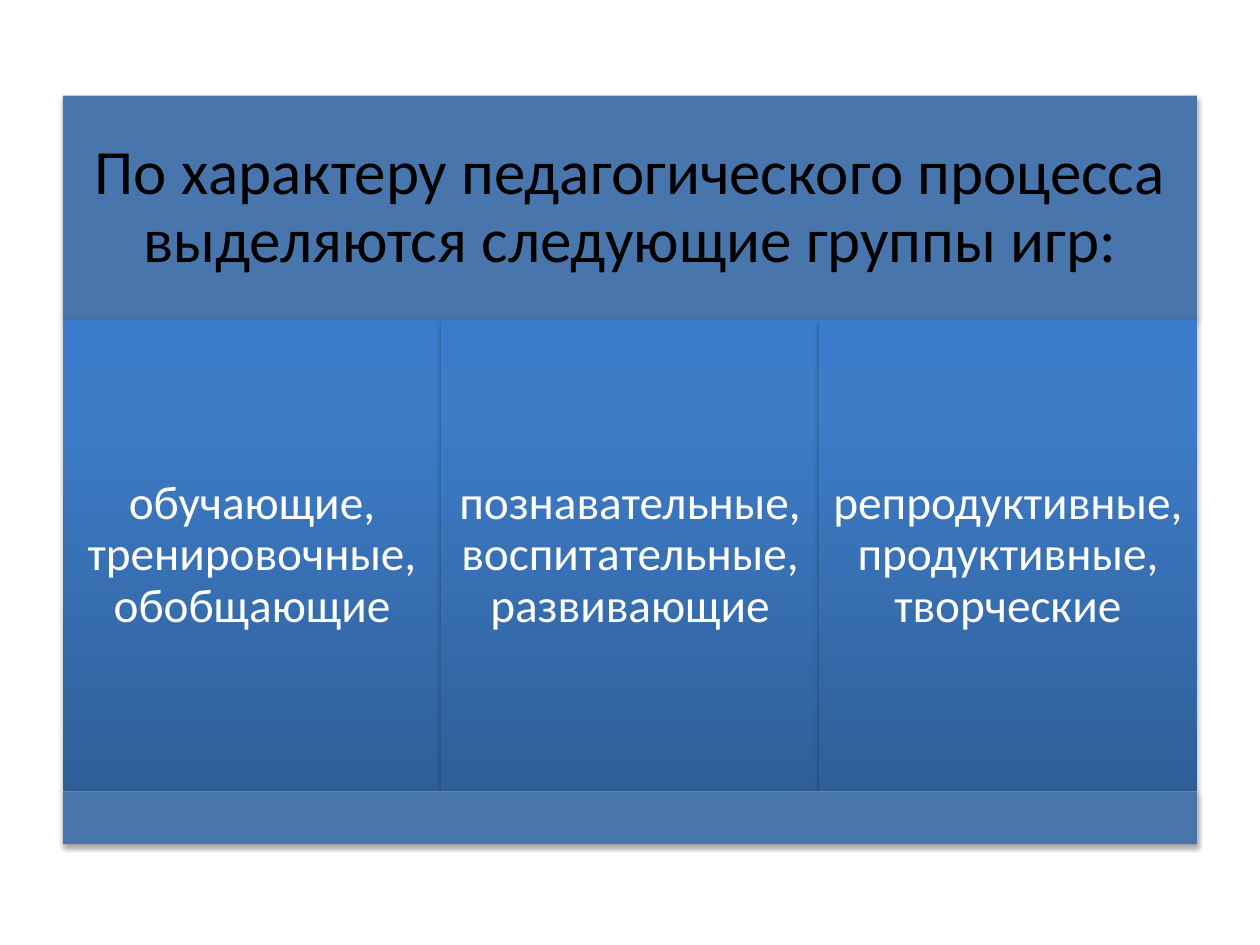
from dataclasses import dataclass
from itertools import accumulate

from lxml import etree
from pptx import Presentation
from pptx.dml.color import RGBColor
from pptx.enum.shapes import MSO_SHAPE
from pptx.enum.text import MSO_ANCHOR, PP_ALIGN
from pptx.oxml import parse_xml
from pptx.oxml.ns import nsdecls, qn
from pptx.util import Inches, Pt

RECT = MSO_SHAPE.RECTANGLE
MIDDLE = MSO_ANCHOR.MIDDLE
CENTER = PP_ALIGN.CENTER


@dataclass(frozen=True)
class Theme:
    font: str = "Calibri"
    band: str = "4875AC"
    stops: tuple = ((0, "2F5F99"), (80, "3D7CC7"), (100, "3A7CCB"))
    dark: str = "000000"
    light: str = "FFFFFF"
    head: int = 36
    body: int = 27


THEME = Theme()
LEFT, TOP, COL = 0.5, 0.76, 3
ROWS = (1.78, 3.74, 0.42)
TOPS = tuple(accumulate(ROWS, initial=TOP))
TITLE = "По характеру педагогического процесса выделяются следующие группы игр:"
GAMES = (
    "обучающие, тренировочные, обобщающие",
    "познавательные, воспитательные, развивающие",
    "репродуктивные, продуктивные, творческие",
)


def add_shade(shape):
    shape.shadow.inherit = False
    effects = shape._element.spPr.find(qn("a:effectLst"))
    effects.append(parse_xml(
        f'<a:outerShdw {nsdecls("a")} blurRad="{Pt(3.1)}" dist="{Pt(1.8)}" '
        'dir="5400000" rotWithShape="0">'
        f'<a:srgbClr val="{THEME.dark}"><a:alpha val="35000"/></a:srgbClr>'
        '</a:outerShdw>'))


def add_block(group, row, col=0, span=1):
    block = group.shapes.add_shape(
        RECT, Inches(LEFT + col * COL), Inches(TOPS[row]),
        Inches(span * COL), Inches(ROWS[row]))
    block.line.fill.background()
    add_shade(block)
    return block


def add_band(group, row):
    band = add_block(group, row, span=len(GAMES))
    band.fill.solid()
    band.fill.fore_color.rgb = RGBColor.from_string(THEME.band)
    return band


def add_panel(group, col):
    panel = add_block(group, 1, col)
    panel.fill.gradient()
    panel.fill.gradient_angle = 90
    stops = panel._element.spPr.find(qn("a:gradFill")).find(qn("a:gsLst"))
    stops.clear()
    for share, color in THEME.stops:
        stop = etree.SubElement(stops, qn("a:gs"), pos=str(share * 1000))
        etree.SubElement(stop, qn("a:srgbClr"), val=color)
    return panel


def set_text(shape, text, size, color, inset):
    frame = shape.text_frame
    frame.word_wrap = True
    frame.vertical_anchor = MIDDLE
    frame.margin_left = frame.margin_right = Inches(inset)
    frame.margin_top = frame.margin_bottom = Inches(inset)
    para = frame.paragraphs[0]
    para.text = text
    para.alignment = CENTER
    para.line_spacing = 0.9
    para.font.name = THEME.font
    para.font.size = Pt(size)
    para.font.color.rgb = RGBColor.from_string(color)


def main():
    deck = Presentation()
    deck.slide_width, deck.slide_height = Inches(10), Inches(7.5)
    slide = deck.slides.add_slide(deck.slide_layouts[6])
    group = slide.shapes.add_group_shape()
    set_text(add_band(group, 0), TITLE, THEME.head, THEME.dark, 0.15)
    for col, text in enumerate(GAMES):
        set_text(add_panel(group, col), text, THEME.body, THEME.light, 0.11)
    add_band(group, 2)
    deck.save("out.pptx")


if __name__ == "__main__":
    main()
